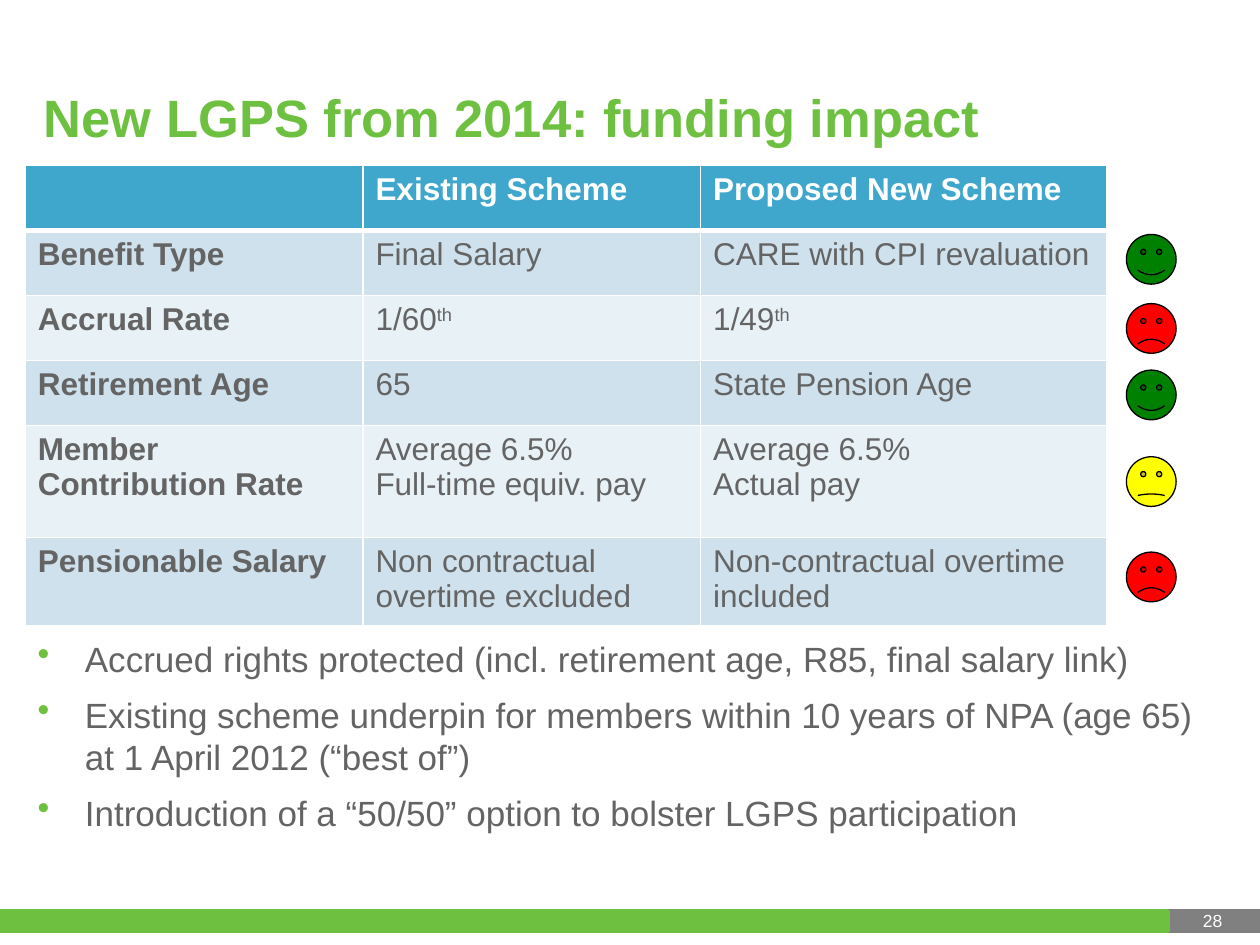
from lxml import etree
from pptx import Presentation
from pptx.dml import color
from pptx.enum import shapes, text
from pptx.oxml import ns
from pptx.util import Pt

HUES = {
    "green": "6EC040", "gray": "808080", "text": "646464", "white": "FFFFFF",
    "head": "3FA6CC", "dark": "CFE1EC", "light": "E8F1F6", "black": "000000",
    "good": "008000", "bad": "FF0000", "fair": "FFFF00",
}
ROWS = [
    ("", "Existing Scheme", "Proposed New Scheme"),
    ("Benefit Type", "Final Salary", "CARE with CPI revaluation"),
    ("Accrual Rate", "1/60^th", "1/49^th"),
    ("Retirement Age", "65", "State Pension Age"),
    ("Member Contribution Rate", "Average 6.5%\nFull-time equiv. pay",
     "Average 6.5%\nActual pay"),
    ("Pensionable Salary", "Non contractual overtime excluded",
     "Non-contractual overtime included"),
]
WIDTHS = (193, 193, 232)
HEIGHTS = (37.2, 37.2, 37.2, 37.2, 64, 47.4)
POINTS = [
    "Accrued rights protected (incl. retirement age, R85, final salary link)",
    "Existing scheme underpin for members within 10 years of NPA (age 65) "
    "at 1 April 2012 (“best of”)",
    "Introduction of a “50/50” option to bolster LGPS participation",
]
FACES = [(134, "good", 0.047), (173.5, "bad", -0.047), (211.5, "good", 0.047),
         (261, "fair", -0.015), (315.5, "bad", -0.047)]


def rgb(hue):
    return color.RGBColor.from_string(HUES[hue])


def style(para, size, hue, bold=False):
    font = para.font
    font.name, font.size, font.bold = "Arial", Pt(size), bold
    font.color.rgb = rgb(hue)


def add_form(slide, kind, box, fill, line, width):
    form = slide.shapes.add_shape(kind, *map(Pt, box))
    form.shadow.inherit = False
    form.fill.solid()
    form.fill.fore_color.rgb = rgb(fill)
    form.line.color.rgb = rgb(line)
    form.line.width = Pt(width)
    return form


def add_text(slide, box, lines, size, hue, bold=False,
             anchor=text.MSO_ANCHOR.TOP, align=text.PP_ALIGN.LEFT, dots=False):
    frame = slide.shapes.add_textbox(*map(Pt, box)).text_frame
    frame.word_wrap = True
    frame.vertical_anchor = anchor
    frame.text = "\n".join(lines)
    for num, para in enumerate(frame.paragraphs):
        para.alignment = align
        if dots:
            para.space_before = Pt(4 if num else 0)
            para.space_after = Pt(4)
            add_dot(para)
        style(para, size, hue, bold)


def add_dot(para):
    props = para._p.get_or_add_pPr()
    props.set("marL", str(Pt(27)))
    props.set("indent", str(Pt(-27)))
    tint = etree.SubElement(props, ns.qn("a:buClr"))
    etree.SubElement(tint, ns.qn("a:srgbClr"), val=HUES["green"])
    etree.SubElement(props, ns.qn("a:buChar"), char="•")


def add_edges(cell, widths):
    props = cell._tc.get_or_add_tcPr()
    for num, (side, width) in enumerate(zip("LRTB", widths)):
        edge = etree.Element(ns.qn("a:ln" + side), w=str(Pt(width)))
        fill = etree.SubElement(edge, ns.qn("a:solidFill"))
        etree.SubElement(fill, ns.qn("a:srgbClr"), val=HUES["white"])
        props.insert(num, edge)


def fill_cell(cell, words, row, col):
    cell.fill.solid()
    fill = "head" if row == 0 else "dark" if row % 2 else "light"
    cell.fill.fore_color.rgb = rgb(fill)
    add_edges(cell, (1, 1, 3 if row == 1 else 1, 1 if row else 3))
    main, _, high = words.partition("^")
    cell.text = main
    if high:
        run = cell.text_frame.paragraphs[0].add_run()
        run.text = high
        run._r.get_or_add_rPr().set("baseline", "30000")
    for para in cell.text_frame.paragraphs:
        style(para, 18, "text" if row else "white", row == 0 or col == 0)


def add_grid(slide):
    box = map(Pt, (14.4, 94.5, sum(WIDTHS), sum(HEIGHTS)))
    grid = slide.shapes.add_table(len(ROWS), len(WIDTHS), *box).table
    for col, width in zip(grid.columns, WIDTHS):
        col.width = Pt(width)
    for row, height in zip(grid.rows, HEIGHTS):
        row.height = Pt(height)
    for row, cells in enumerate(ROWS):
        for col, words in enumerate(cells):
            fill_cell(grid.cell(row, col), words, row, col)


def add_face(slide, top, fill, smile):
    face = add_form(slide, shapes.MSO_SHAPE.SMILEY_FACE,
                    (643.7, top, 28.4, 28.4), fill, "black", 0.75)
    face.adjustments[0] = smile


def main():
    deck = Presentation()
    deck.slide_width, deck.slide_height = Pt(720), Pt(540)
    slide = deck.slides.add_slide(deck.slide_layouts[6])
    for left, width, hue in ((660, 60, "gray"), (0, 667.5, "green")):
        add_form(slide, shapes.MSO_SHAPE.RECTANGLE,
                 (left, 520.6, width, 11.5), hue, hue, 2)
    add_text(slide, (659.5, 493.2, 46, 42.5), ["28"], 10, "white",
             anchor=text.MSO_ANCHOR.BOTTOM, align=text.PP_ALIGN.RIGHT)
    add_text(slide, (18, 21.6, 648, 90), ["New LGPS from 2014: funding impact"],
             30, "green", bold=True, anchor=text.MSO_ANCHOR.MIDDLE)
    add_grid(slide)
    add_text(slide, (14.4, 360.7, 680.4, 158.4), POINTS, 20, "text", dots=True)
    for face in FACES:
        add_face(slide, *face)
    deck.save("out.pptx")


if __name__ == "__main__":
    main()
